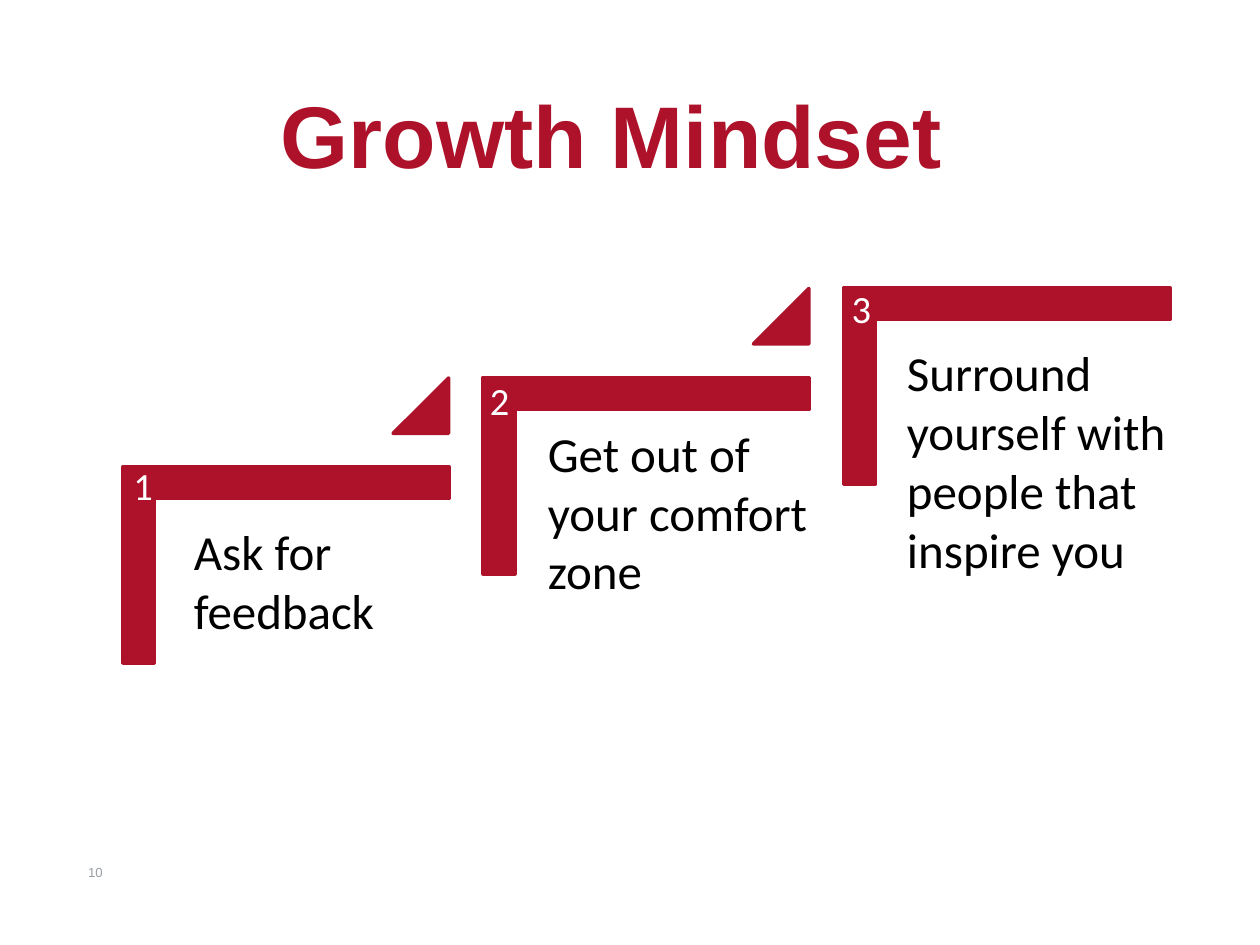
from pptx import Presentation
from pptx.dml.color import RGBColor
from pptx.enum.shapes import MSO_SHAPE
from pptx.enum.text import MSO_ANCHOR
from pptx.util import Inches, Pt

CORNER = MSO_SHAPE.CORNER
TRIANGLE = MSO_SHAPE.ISOSCELES_TRIANGLE
TOP, BOTTOM = MSO_ANCHOR.TOP, MSO_ANCHOR.BOTTOM
RED, BLACK, WHITE, GRAY = "AD122A", "000000", "FFFFFF", "989EA3"

presentation = Presentation()
presentation.slide_width = Inches(10)
presentation.slide_height = Inches(7.5)
slide = presentation.slides.add_slide(presentation.slide_layouts[6])


def color(hex_string):
    return RGBColor.from_string(hex_string)


def add_text(text, box, size, ink, font="Calibri", bold=False, anchor=TOP,
             margin=0.05, spacing=None):
    text_box = slide.shapes.add_textbox(*[Inches(length) for length in box])
    frame = text_box.text_frame
    frame.word_wrap = True
    frame.vertical_anchor = anchor
    frame.margin_top = frame.margin_bottom = Inches(margin)
    paragraph = frame.paragraphs[0]
    paragraph.line_spacing = spacing
    run = paragraph.add_run()
    run.text = text
    run.font.name = font
    run.font.size = Pt(size)
    run.font.bold = bold
    run.font.color.rgb = color(ink)


# Page number and title
add_text("10", (0.6, 6.81, 0.55, 0.32), 7.5, GRAY, font="Arial")
add_text("Growth Mindset", (2.13, 0, 8.32, 1.49), 50, RED, font="Arial",
         bold=True, anchor=BOTTOM, margin=0, spacing=0.9)

# Staircase: each step is one column to the right and one rise higher
COLUMN, RISE = 2.86, 0.71
FIRST_LEFT, FIRST_TOP = 1.49, 3.19
CORNER_WIDTH, CORNER_HEIGHT, TRIANGLE_SIDE = 1.56, 2.59, 0.44

# Step text, its box, and the place of its number
steps = [
    ("Ask for feedback", (1.44, 4.09, 1.75, 1.04), (0.96, 3.62)),
    ("Get out of your comfort zone", (4.25, 3.31, 2.34, 1.51), (3.79, 2.94)),
    ("Surround yourself with people that inspire you",
     (7.1, 2.67, 2.26, 1.99), (6.66, 2.21)),
]

for index, (text, text_area, number_place) in enumerate(steps):
    left = FIRST_LEFT + index * COLUMN
    top = FIRST_TOP - index * RISE

    # Corner bracket, with a triangle leading up to the next step
    corner = slide.shapes.add_shape(
        CORNER, Inches(left), Inches(top),
        Inches(CORNER_WIDTH), Inches(CORNER_HEIGHT))
    corner.rotation = 90
    corner.adjustments[0] = corner.adjustments[1] = 0.161
    step_shapes = [corner]
    if index < len(steps) - 1:
        triangle = slide.shapes.add_shape(
            TRIANGLE, Inches(left + 1.63), Inches(top - 0.19),
            Inches(TRIANGLE_SIDE), Inches(TRIANGLE_SIDE))
        triangle.adjustments[0] = 1
        step_shapes.append(triangle)

    for shape in step_shapes:
        shape.shadow.inherit = False
        shape.fill.solid()
        shape.fill.fore_color.rgb = color(RED)
        shape.line.color.rgb = color(RED)
        shape.line.width = Pt(2)

    # Step text and number
    add_text(text, text_area, 28, BLACK)
    add_text(str(index + 1), (*number_place, 0.38, 0.47), 22, WHITE)

presentation.save("out.pptx")
